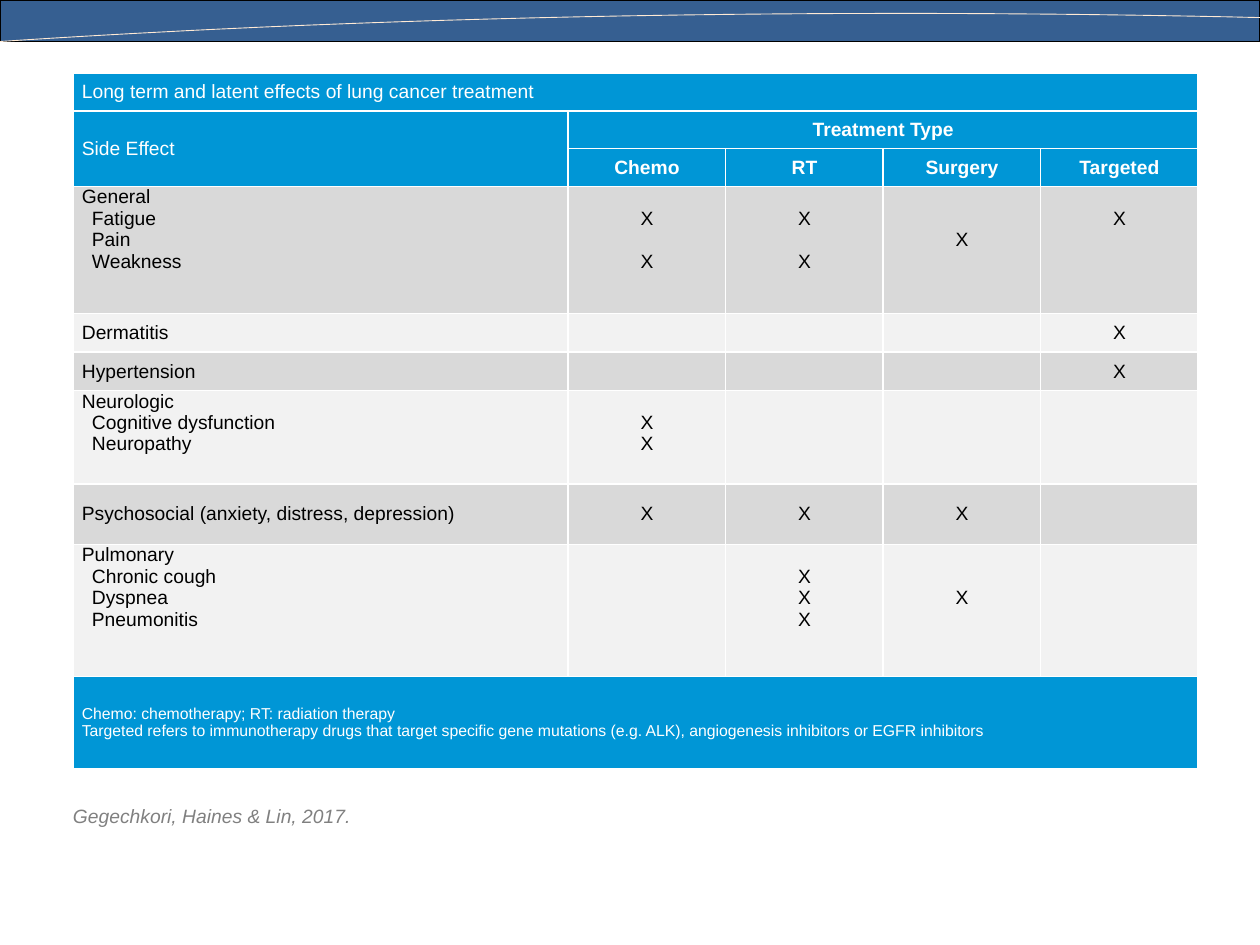
from lxml.etree import SubElement
from pptx import Presentation
from pptx.dml.color import RGBColor
from pptx.enum.shapes import MSO_SHAPE
from pptx.enum.text import MSO_ANCHOR, PP_ALIGN
from pptx.oxml.ns import qn
from pptx.util import Inches, Pt

BLUE, WHITE, BLACK = "0096D6", "FFFFFF", "000000"
LINE_PITCH = 12.25


def rgb(value):
    return RGBColor.from_string(value)


def write(frame, lines, size=11, color=BLACK, bold=False, italic=False,
          align=PP_ALIGN.LEFT, pitch=None, indent=0, gaps=None):
    for i, line in enumerate(lines):
        paragraph = frame.paragraphs[0] if i == 0 else frame.add_paragraph()
        paragraph.alignment = align
        if pitch:
            paragraph.line_spacing = Pt(pitch)
        if i and indent:
            paragraph._p.get_or_add_pPr().set("marL", str(Inches(indent)))
        if i and gaps:
            paragraph.space_before = Pt(gaps[i])
        run = paragraph.add_run()
        run.text = line
        run.font.name = "Arial"
        run.font.size = Pt(size)
        run.font.bold = bold
        run.font.italic = italic
        run.font.color.rgb = rgb(color)


prs = Presentation()
prs.slide_width, prs.slide_height = Inches(10), Inches(7.5)
slide = prs.slides.add_slide(prs.slide_layouts[6])

banner = slide.shapes.add_shape(MSO_SHAPE.RECTANGLE, 0, 0, Inches(10), Inches(0.33))
banner.shadow.inherit = False
banner.fill.solid()
banner.fill.fore_color.rgb = rgb("365F91")
banner.line.color.rgb = rgb(BLACK)
banner.line.width = Pt(0.75)

curve = ((10, 0.14), (7.44, 0.08), (3.79, 0.08), (0, 0.33))
steps = 60
points = []
for step in range(steps + 1):
    t = step / steps
    weights = ((1 - t) ** 3, 3 * t * (1 - t) ** 2, 3 * t * t * (1 - t), t ** 3)
    points.append(tuple(Inches(sum(w * p[axis] for w, p in zip(weights, curve)))
                        for axis in (0, 1)))
builder = slide.shapes.build_freeform(*points[0])
builder.add_line_segments(points[1:], close=False)
swoosh = builder.convert_to_shape()
swoosh.shadow.inherit = False
swoosh.fill.background()
swoosh.line.color.rgb = rgb("FFEAD5")
swoosh.line.width = Pt(0.5)

column_widths = [3.93] + [1.25] * 4
row_heights = [0.3, 0.3, 0.3, 1.01, 0.3, 0.3, 0.74, 0.48, 1.05, 0.73]
treatments = ["Chemo", "RT", "Surgery", "Targeted"]
effects = [
    (["General", "Fatigue", "Pain", "Weakness"], [[1, 3], [1, 3], [2], [1]]),
    (["Dermatitis"], [[], [], [], [0]]),
    (["Hypertension"], [[], [], [], [0]]),
    (["Neurologic", "Cognitive dysfunction", "Neuropathy"], [[1, 2], [], [], []]),
    (["Psychosocial (anxiety, distress, depression)"], [[0], [0], [0], []]),
    (["Pulmonary", "Chronic cough", "Dyspnea", "Pneumonitis"],
     [[], [1, 2, 3], [2], []]),
]
first_effect = 3
last_row = len(row_heights) - 1

table = slide.shapes.add_table(
    len(row_heights), len(column_widths), Inches(0.58), Inches(0.58),
    Inches(sum(column_widths)), Inches(sum(row_heights))).table
for column, width in zip(table.columns, column_widths):
    column.width = Inches(width)
for row, height in zip(table.rows, row_heights):
    row.height = Inches(height)

for r, row in enumerate(table.rows):
    shade = ("D9D9D9", "F2F2F2")[(r - first_effect) % 2]
    for cell in row.cells:
        cell.margin_left = cell.margin_right = Inches(0.07)
        cell.margin_top = cell.margin_bottom = 0
        cell.vertical_anchor = MSO_ANCHOR.MIDDLE
        properties = cell._tc.get_or_add_tcPr()
        for side in ("a:lnL", "a:lnR", "a:lnT", "a:lnB"):
            border = SubElement(properties, qn(side), w=str(Pt(1)))
            SubElement(SubElement(border, qn("a:solidFill")), qn("a:srgbClr"), val=WHITE)
        cell.fill.solid()
        cell.fill.fore_color.rgb = rgb(shade if first_effect <= r < last_row else BLUE)

for top, left, bottom, right in ((0, 0, 0, 4), (1, 0, 2, 0), (1, 1, 1, 4),
                                 (last_row, 0, last_row, 4)):
    table.cell(top, left).merge(table.cell(bottom, right))

write(table.cell(0, 0).text_frame,
      ["Long term and latent effects of lung cancer treatment"], color=WHITE)
write(table.cell(1, 0).text_frame, ["Side Effect"], color=WHITE)
write(table.cell(1, 1).text_frame, ["Treatment Type"], color=WHITE, bold=True,
      align=PP_ALIGN.CENTER)
for c, treatment in enumerate(treatments, 1):
    write(table.cell(2, c).text_frame, [treatment], color=WHITE, bold=True,
          align=PP_ALIGN.CENTER)

for r, (names, marks) in enumerate(effects, first_effect):
    grouped = len(names) > 1
    pitch = LINE_PITCH if grouped else None
    if grouped:
        for cell in table.rows[r].cells:
            cell.vertical_anchor = MSO_ANCHOR.TOP
    write(table.cell(r, 0).text_frame, names, pitch=pitch, indent=0.08)
    for c, levels in enumerate(marks, 1):
        if levels:
            cell = table.cell(r, c)
            cell.margin_top = Pt(levels[0] * LINE_PITCH)
            gaps = [0] + [(b - a - 1) * LINE_PITCH for a, b in zip(levels, levels[1:])]
            write(cell.text_frame, ["X"] * len(levels), align=PP_ALIGN.CENTER,
                  pitch=pitch, gaps=gaps)

write(table.cell(last_row, 0).text_frame,
      ["Chemo: chemotherapy; RT: radiation therapy",
       "Targeted refers to immunotherapy drugs that target specific gene mutations "
       "(e.g. ALK), angiogenesis inhibitors or EGFR inhibitors"],
      size=9, color=WHITE)

citation = slide.shapes.add_textbox(Inches(0.48), Inches(6.33), Inches(9.02), Inches(0.29))
citation.text_frame.word_wrap = True
write(citation.text_frame, ["Gegechkori, Haines & Lin, 2017."], color="808080", italic=True)

prs.save("out.pptx")
